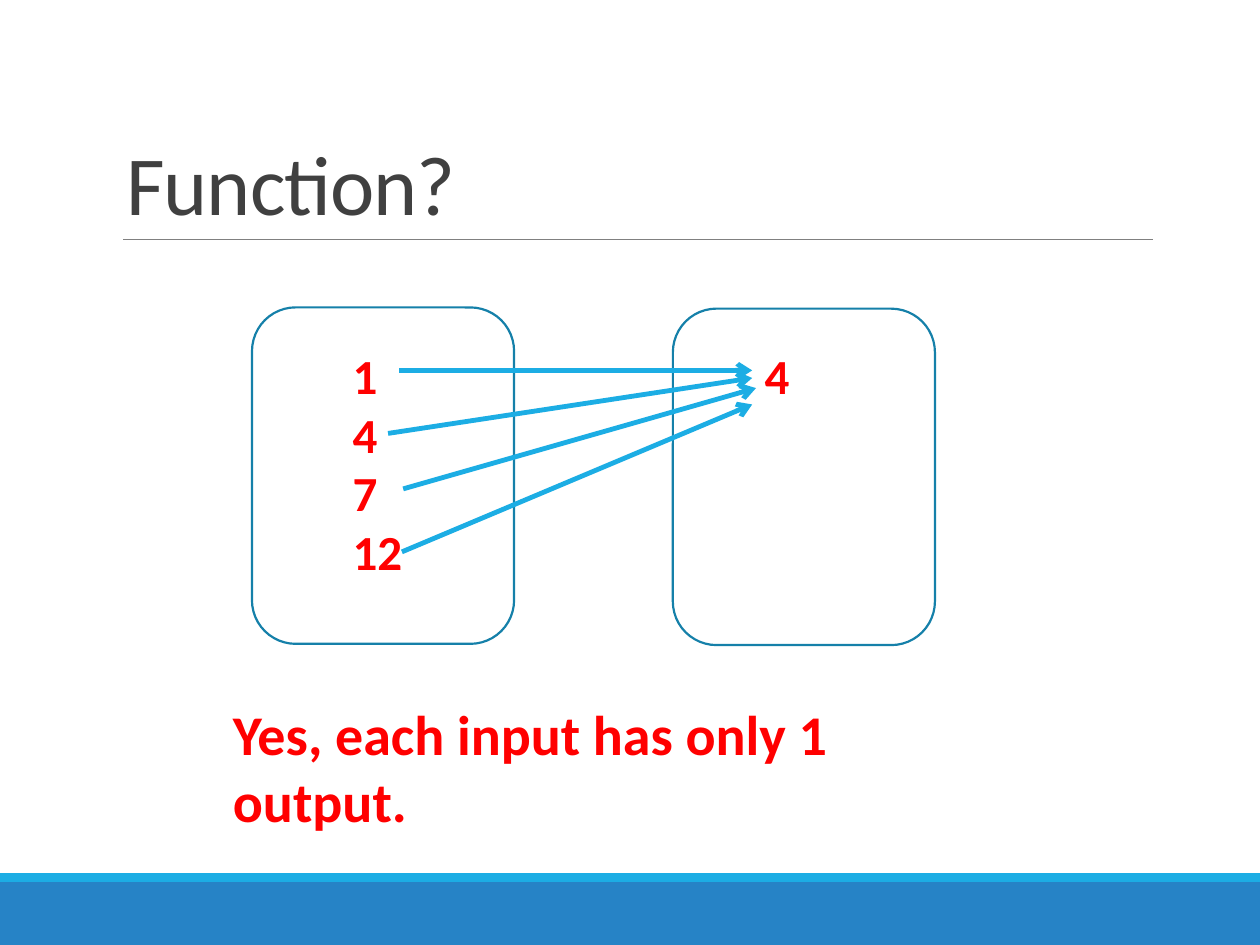
from typing import NamedTuple

import pptx
import pptx.dml.color
import pptx.enum.shapes
import pptx.enum.text
import pptx.oxml.ns
import pptx.util
from lxml import etree

Inches, Pt = pptx.util.Inches, pptx.util.Pt
RGBColor = pptx.dml.color.RGBColor
SHAPE = pptx.enum.shapes.MSO_SHAPE
TEXT = pptx.enum.text

BLUE = RGBColor(0x26, 0x83, 0xC6)
CYAN = RGBColor(0x1C, 0xAD, 0xE4)
OUTLINE = RGBColor(0x15, 0x80, 0xA9)
GRAY = RGBColor(0x80, 0x80, 0x80)
DARK = RGBColor(0x40, 0x40, 0x40)
RED = RGBColor(0xFF, 0x00, 0x00)
FONT = "Calibri"


class Box(NamedTuple):
    left: float
    top: float
    width: float
    height: float


class Segment(NamedTuple):
    x1: float
    y1: float
    x2: float
    y2: float


class Label(NamedTuple):
    lines: list[str]
    box: Box
    size: int


BANDS = [(Box(0, 7, 10, 0.5), BLUE), (Box(0, 6.93, 10, 0.07), CYAN)]
TITLE_RULE = Segment(0.98, 1.9, 9.15, 1.9)
SETS = [Box(2, 2.44, 2.08, 2.67), Box(5.34, 2.45, 2.08, 2.67)]
LABELS = [
    Label(["1", "4", "7", "12"], Box(2.7, 2.69, 1.83, 1.99), 28),
    Label(["4"], Box(5.97, 2.69, 1.83, 1.04), 28),
    Label(["Yes, each input has only 1 output."], Box(1.75, 5.5, 5.58, 1.18), 32),
]
MAPPINGS = [
    Segment(3.17, 2.94, 5.97, 2.94),
    Segment(3.08, 3.44, 5.97, 3),
    Segment(3.2, 3.88, 6, 3.08),
    Segment(3.19, 4.38, 5.97, 3.21),
]


def add_band(s, box: Box, color: RGBColor) -> None:
    sp = s.shapes.add_shape(SHAPE.RECTANGLE, *map(Inches, box))
    sp.shadow.inherit = False
    sp.fill.solid()
    sp.fill.fore_color.rgb = color
    sp.line.fill.background()


def add_set(s, box: Box) -> None:
    sp = s.shapes.add_shape(SHAPE.ROUNDED_RECTANGLE, *map(Inches, box))
    sp.shadow.inherit = False
    sp.fill.background()
    sp.line.color.rgb = OUTLINE
    sp.line.width = Pt(1.25)


def add_line(s, seg: Segment, color: RGBColor, width: float, arrow: bool = False) -> None:
    line = s.shapes.add_connector(
        pptx.enum.shapes.MSO_CONNECTOR.STRAIGHT, *map(Inches, seg))
    line.line.color.rgb = color
    line.line.width = Pt(width)
    qn = pptx.oxml.ns.qn
    props = line._element.spPr
    if arrow:
        etree.SubElement(props.find(qn("a:ln")), qn("a:tailEnd"), type="arrow")
    etree.SubElement(props, qn("a:effectLst"))


def add_label(s, label: Label) -> None:
    tf = s.shapes.add_textbox(*map(Inches, label.box)).text_frame
    tf.word_wrap = True
    tf.text = "\n".join(label.lines)
    for p in tf.paragraphs:
        p.font.name = FONT
        p.font.size = Pt(label.size)
        p.font.bold = True
        p.font.color.rgb = RED


def set_title(s, text: str, box: Box) -> None:
    title = s.shapes.title
    title.left, title.top, title.width, title.height = map(Inches, box)
    tf = title.text_frame
    tf.text = text
    tf.auto_size = TEXT.MSO_AUTO_SIZE.NONE
    tf.vertical_anchor = TEXT.MSO_ANCHOR.BOTTOM
    p = tf.paragraphs[0]
    p.alignment = TEXT.PP_ALIGN.LEFT
    p.line_spacing = 0.85
    p.font.name = FONT
    p.font.size = Pt(48)
    p.font.color.rgb = DARK
    # Letter spacing in hundredths of a point
    p.runs[0].font._element.set("spc", "-50")


def main() -> None:
    prs = pptx.Presentation()
    prs.slide_width, prs.slide_height = Inches(10), Inches(7.5)
    s = prs.slides.add_slide(prs.slide_layouts.get_by_name("Title Only"))

    # Footer bands, title and its rule
    for box, color in BANDS:
        add_band(s, box, color)
    add_line(s, TITLE_RULE, GRAY, 0.5)
    set_title(s, "Function?", Box(0.9, 0.31, 8.25, 1.59))

    # Mapping diagram and answer
    for box in SETS:
        add_set(s, box)
    for label in LABELS:
        add_label(s, label)
    for seg in MAPPINGS:
        add_line(s, seg, CYAN, 2.75, arrow=True)

    prs.save("out.pptx")


if __name__ == "__main__":
    main()
